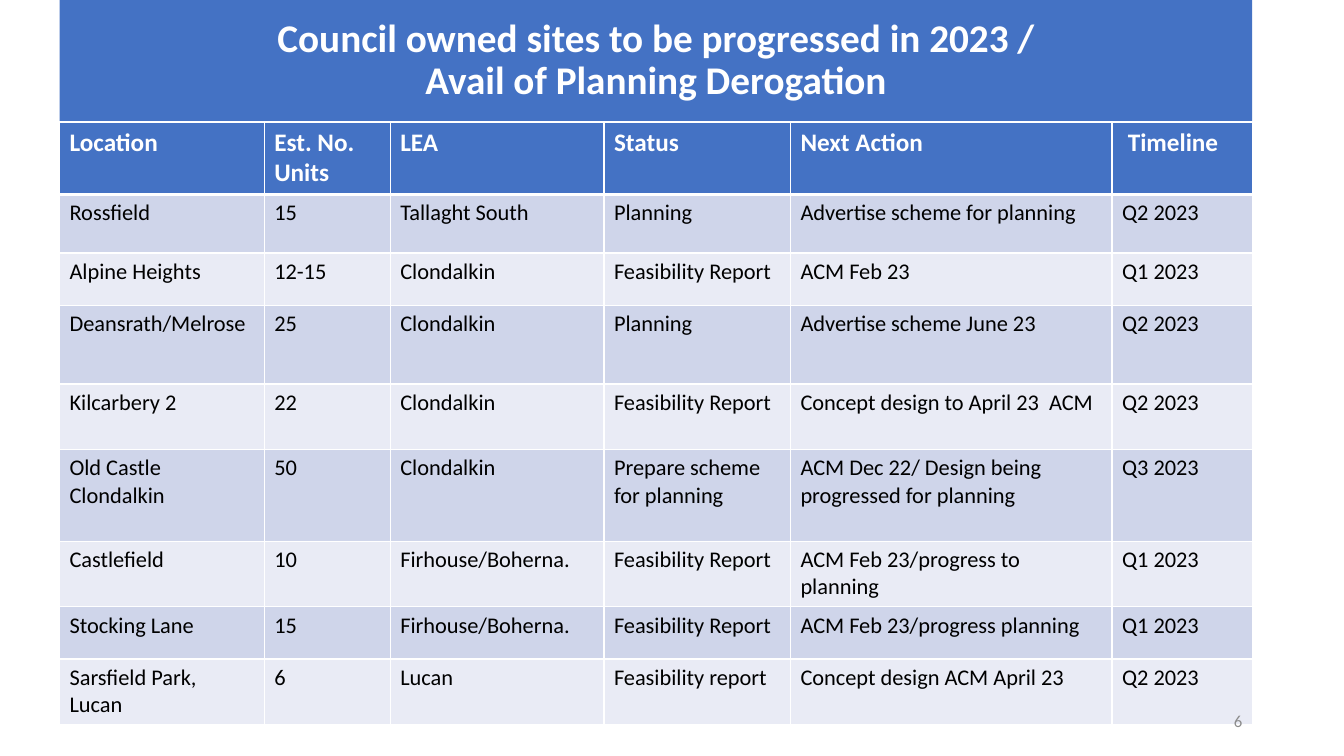
from typing import NamedTuple

from lxml.etree import SubElement
from pptx import Presentation
from pptx.dml.color import RGBColor
from pptx.enum.text import MSO_ANCHOR as Anchor, PP_ALIGN as Align
from pptx.oxml.ns import qn
from pptx.util import Inches, Pt

COLORS = {
    "blue": "4472C4",
    "band_dark": "CFD5EA",
    "band_light": "E9EBF5",
    "white": "FFFFFF",
    "black": "000000",
    "gray": "8C8C8C",
}
FONT = "Calibri"
LEFT, WIDTH, TITLE_HEIGHT = 0.59, 11.83, 1.21


class Site(NamedTuple):
    location: str
    units: str
    area: str
    status: str
    next_action: str
    timeline: str
    height: float


class TextStyle(NamedTuple):
    size: float
    color: str
    bold: bool = False


TITLE_STYLE = TextStyle(28, "white", True)
HEADER_STYLE = TextStyle(18, "white", True)
BODY_STYLE = TextStyle(16, "black")
NUMBER_STYLE = TextStyle(12, "gray")

TITLE_LINES = ["Council owned sites to be progressed in 2023 /", "Avail of Planning Derogation"]
COLUMN_WIDTHS = [2.03, 1.25, 2.12, 1.85, 3.19, 1.39]
HEADER = Site("Location", "Est. No. Units", "LEA", "Status", "Next Action", " Timeline", 0.72)
SITES = [
    Site("Rossfield", "15", "Tallaght South", "Planning",
         "Advertise scheme for planning", "Q2 2023", 0.58),
    Site("Alpine Heights", "12-15", "Clondalkin", "Feasibility Report",
         "ACM Feb 23", "Q1 2023", 0.52),
    Site("Deansrath/Melrose", "25", "Clondalkin", "Planning",
         "Advertise scheme June 23", "Q2 2023", 0.78),
    Site("Kilcarbery 2", "22", "Clondalkin", "Feasibility Report",
         "Concept design to April 23  ACM", "Q2 2023", 0.65),
    Site("Old Castle Clondalkin", "50", "Clondalkin", "Prepare scheme for planning",
         "ACM Dec 22/ Design being progressed for planning", "Q3 2023", 0.91),
    Site("Castlefield", "10", "Firhouse/Boherna.", "Feasibility Report",
         "ACM Feb 23/progress to planning", "Q1 2023", 0.65),
    Site("Stocking Lane", "15", "Firhouse/Boherna.", "Feasibility Report",
         "ACM Feb 23/progress planning", "Q1 2023", 0.52),
    Site("Sarsfield Park, Lucan", "6", "Lucan", "Feasibility report",
         "Concept design ACM April 23", "Q2 2023", 0.65),
]


def set_fill(target, color: str) -> None:
    target.fill.solid()
    target.fill.fore_color.rgb = RGBColor.from_string(COLORS[color])


def add_text(paragraph, text: str, style: TextStyle) -> None:
    run = paragraph.add_run()
    run.text = text
    run.font.name = FONT
    run.font.size = Pt(style.size)
    run.font.bold = style.bold
    run.font.color.rgb = RGBColor.from_string(COLORS[style.color])


def set_borders(cell, top: float, bottom: float) -> None:
    properties = cell._tc.get_or_add_tcPr()
    widths = {"a:lnL": 1, "a:lnR": 1, "a:lnT": top, "a:lnB": bottom}
    for position, (tag, width) in enumerate(widths.items()):
        line = SubElement(properties, qn(tag), w=str(Pt(width)))
        fill = SubElement(line, qn("a:solidFill"))
        SubElement(fill, qn("a:srgbClr"), val=COLORS["white"])
        properties.insert(position, line)  # borders come before the fill


def add_title(slide) -> None:
    title = slide.shapes.title
    title.left, title.top = Inches(LEFT), Inches(0)
    title.width, title.height = Inches(WIDTH), Inches(TITLE_HEIGHT)
    set_fill(title, "blue")
    title.text_frame.vertical_anchor = Anchor.MIDDLE
    paragraph = title.text_frame.paragraphs[0]
    paragraph.alignment = Align.CENTER
    paragraph.line_spacing = 0.9
    for index, line in enumerate(TITLE_LINES):
        if index:
            paragraph.add_line_break()
        add_text(paragraph, line, TITLE_STYLE)


def add_sites_table(slide) -> None:
    rows = [HEADER, *SITES]
    height = sum(row.height for row in rows)
    table = slide.shapes.add_table(
        len(rows), len(COLUMN_WIDTHS),
        Inches(LEFT), Inches(TITLE_HEIGHT), Inches(WIDTH), Inches(height),
    ).table
    for column, width in zip(table.columns, COLUMN_WIDTHS):
        column.width = Inches(width)
    for index, site in enumerate(rows):
        table.rows[index].height = Inches(site.height)
        is_header = index == 0
        band = "blue" if is_header else "band_dark" if index % 2 else "band_light"
        style = HEADER_STYLE if is_header else BODY_STYLE
        for cell, text in zip(table.rows[index].cells, site[:-1]):
            set_fill(cell, band)
            # A thicker rule separates the header from the first site
            set_borders(cell, top=3 if index == 1 else 1, bottom=3 if is_header else 1)
            add_text(cell.text_frame.paragraphs[0], text, style)


def add_slide_number(slide, number: str) -> None:
    box = slide.shapes.add_textbox(Inches(9.42), Inches(6.95), Inches(3), Inches(0.4))
    frame = box.text_frame
    frame.word_wrap = True
    frame.vertical_anchor = Anchor.MIDDLE
    frame.paragraphs[0].alignment = Align.RIGHT
    add_text(frame.paragraphs[0], number, NUMBER_STYLE)


def main() -> None:
    presentation = Presentation()
    presentation.slide_width, presentation.slide_height = Inches(13.33), Inches(7.5)
    slide = presentation.slides.add_slide(presentation.slide_layouts[5])
    add_title(slide)
    add_sites_table(slide)
    add_slide_number(slide, "6")
    presentation.save("out.pptx")


if __name__ == "__main__":
    main()
